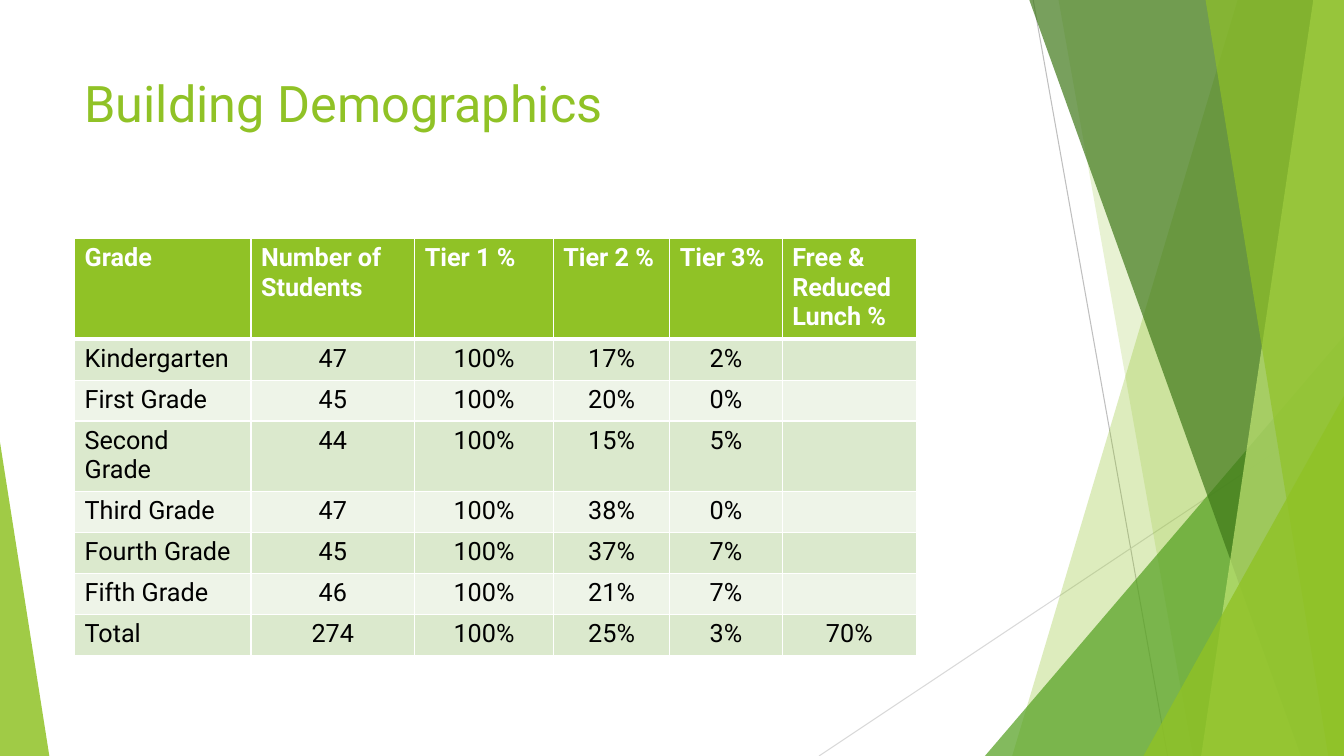
from lxml import etree
from pptx import Presentation, util as u
from pptx.dml.color import RGBColor
from pptx.enum import shapes, text
from pptx.oxml.ns import qn

PX = 9525
W, H = 1280, 720
FONT = "Roboto"
COLORS = {
    "lime": "90C226", "green": "54A021", "forest": "3F7819", "pale": "C0E474",
    "band": "DBE9CD", "light": "EEF4E8", "white": "FFFFFF", "black": "000000",
    "grey": "BFBFBF", "silver": "D9D9D9",
}
COLUMNS = [168, 156, 132, 111, 107, 128]
DEMOGRAPHICS = [
    ["Grade", "Number of Students", "Tier 1 %", "Tier 2 %", "Tier 3%", "Free & Reduced Lunch %"],
    ["Kindergarten", "47", "100%", "17%", "2%", ""],
    ["First Grade", "45", "100%", "20%", "0%", ""],
    ["Second Grade", "44", "100%", "15%", "5%", ""],
    ["Third Grade", "47", "100%", "38%", "0%", ""],
    ["Fourth Grade", "45", "100%", "37%", "7%", ""],
    ["Fifth Grade", "46", "100%", "21%", "7%", ""],
    ["Total", "274", "100%", "25%", "3%", "70%"],
]


def px(*lengths):
    """Turn px lengths into EMU."""
    return [n * PX for n in lengths]


def rgb(name):
    """Look up a colour by name."""
    return RGBColor.from_string(COLORS[name])


def add_run(p, words, size, color, bold=False):
    """Add one styled run to a paragraph."""
    r = p.add_run()
    r.text = words
    r.font.name, r.font.size, r.font.bold = FONT, u.Pt(size), bold
    r.font.color.rgb = rgb(color)


def paint(sp, color, alpha):
    """Give a shape a translucent fill and no line or shadow."""
    sp.shadow.inherit = False
    sp.line.fill.background()
    sp.fill.solid()
    sp.fill.fore_color.rgb = rgb(color)
    clr = sp._element.spPr.find(".//" + qn("a:srgbClr"))
    etree.SubElement(clr, qn("a:alpha")).set("val", str(alpha * 1000))


def add_ray(s, x1, y1, x2, y2, color):
    """Draw a thin straight line."""
    cn = s.shapes.add_connector(shapes.MSO_CONNECTOR.STRAIGHT, *px(x1, y1, x2, y2))
    cn.line.color.rgb = rgb(color)
    cn.line.width = u.Pt(0.75)
    etree.SubElement(cn._element.spPr, qn("a:effectLst"))


def add_shard(s, right, bottom, top_x, bottom_x, color, alpha):
    """Draw a facet that runs from a slanted edge to the right side."""
    fb = s.shapes.build_freeform(top_x, -1, scale=PX)
    fb.add_line_segments([(right, -1), (right, bottom), (bottom_x, bottom)], close=True)
    paint(fb.convert_to_shape(), color, alpha)


def add_corner(s, x, bottom, w, h, tip, color, alpha):
    """Draw a triangle standing on the bottom edge."""
    sp = s.shapes.add_shape(shapes.MSO_SHAPE.ISOSCELES_TRIANGLE, *px(x, bottom - h, w, h))
    sp.adjustments[0] = tip
    paint(sp, color, alpha)


def add_facets(s, x, y, w, h):
    """Draw the faceted decoration along both sides of the box."""
    right, bottom = x + w, y + h
    add_ray(s, right - 296, y, right - 168, bottom, "grey")
    add_ray(s, right, y + 387, right - 500, bottom, "silver")
    add_shard(s, right, bottom, right - 101, right - 316, "lime", 30)
    add_shard(s, right, bottom, right - 272, right - 144, "lime", 20)
    add_corner(s, right - 342, bottom, 342, 400, 1, "green", 72)
    for top, base, color, alpha in [(300, 41, "forest", 70), (29, 136, "pale", 70),
                                    (132, 15, "lime", 65)]:
        add_shard(s, right, bottom, right - top, right - base, color, alpha)
    add_corner(s, right - 191, bottom, 191, 343, 1, "lime", 80)
    add_corner(s, x, bottom, 47, 299, 0, "lime", 85)


def add_title(s, x, y, w, h):
    """Write the slide title in the box."""
    tf = s.shapes.add_textbox(*px(x, y, w, h)).text_frame
    tf.word_wrap = True
    add_run(tf.paragraphs[0], "Building Demographics", 36, "lime")


def add_border(cell, side, points):
    """Set one white cell border."""
    ln = etree.SubElement(cell._tc.get_or_add_tcPr(), qn("a:ln" + side), w=str(u.Pt(points)))
    fill = etree.SubElement(ln, qn("a:solidFill"))
    etree.SubElement(fill, qn("a:srgbClr"), val=COLORS["white"])


def add_demographics(s, x, y, w, row_h):
    """Build the table of grades with a header and banded rows."""
    n = len(DEMOGRAPHICS)
    table = s.shapes.add_table(n, len(COLUMNS), *px(x, y, w, n * row_h)).table
    table.horz_banding = False
    for col, width in zip(table.columns, COLUMNS):
        col.width = width * PX
    for i, values in enumerate(DEMOGRAPHICS):
        header = i == 0
        table.rows[i].height = row_h * PX
        for j, value in enumerate(values):
            cell = table.cell(i, j)
            for side in "LRTB":
                heavy = (i, side) in [(0, "B"), (1, "T")]
                add_border(cell, side, 3 if heavy else 1)
            cell.fill.solid()
            cell.fill.fore_color.rgb = rgb("lime" if header else "band" if i % 2 else "light")
            p = cell.text_frame.paragraphs[0]
            if j and not header:
                p.alignment = text.PP_ALIGN.CENTER
            if value:
                add_run(p, value, 18, "white" if header else "black", header)


def main():
    """Build and save the slide."""
    prs = Presentation()
    prs.slide_width, prs.slide_height = px(W, H)
    s = prs.slides.add_slide(prs.slide_layouts[6])
    add_facets(s, 0, 0, W, H)
    add_title(s, 71, 64, 902, 138)
    add_demographics(s, 71, 227, sum(COLUMNS), 39)
    prs.save("out.pptx")


if __name__ == "__main__":
    main()
